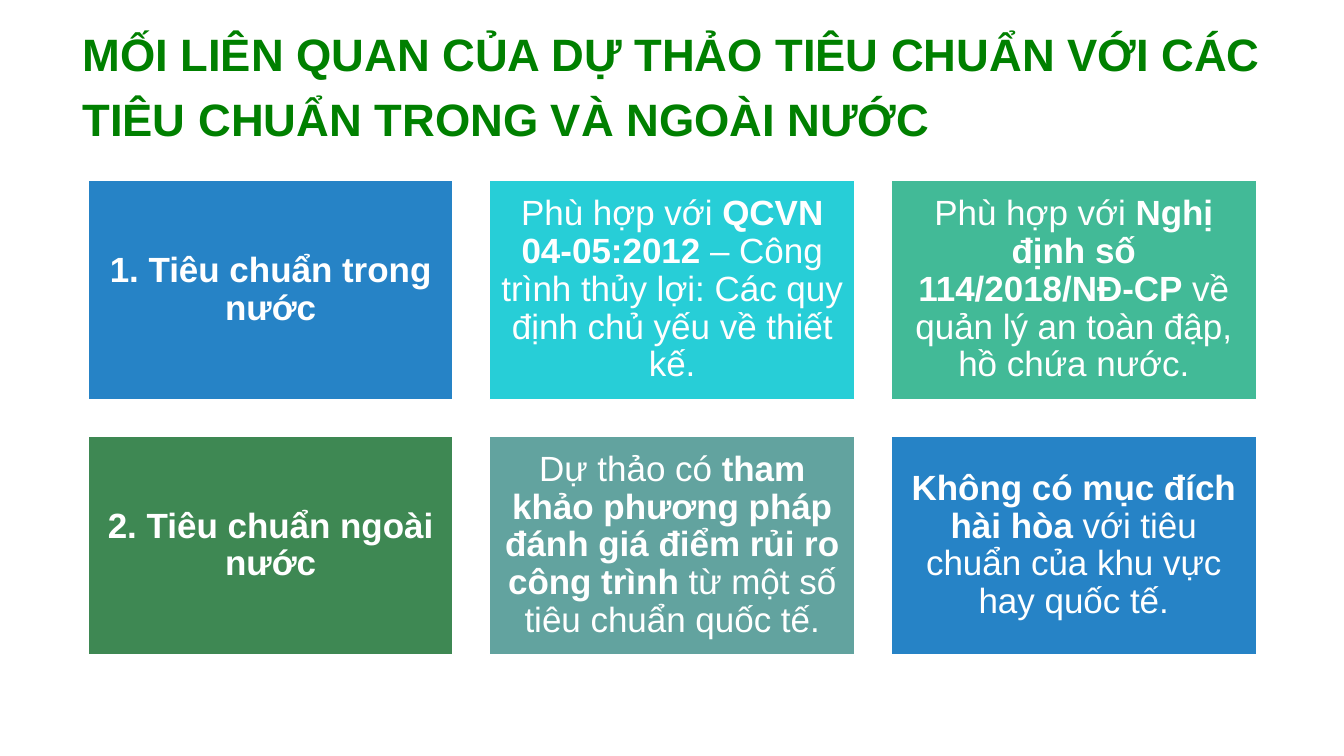
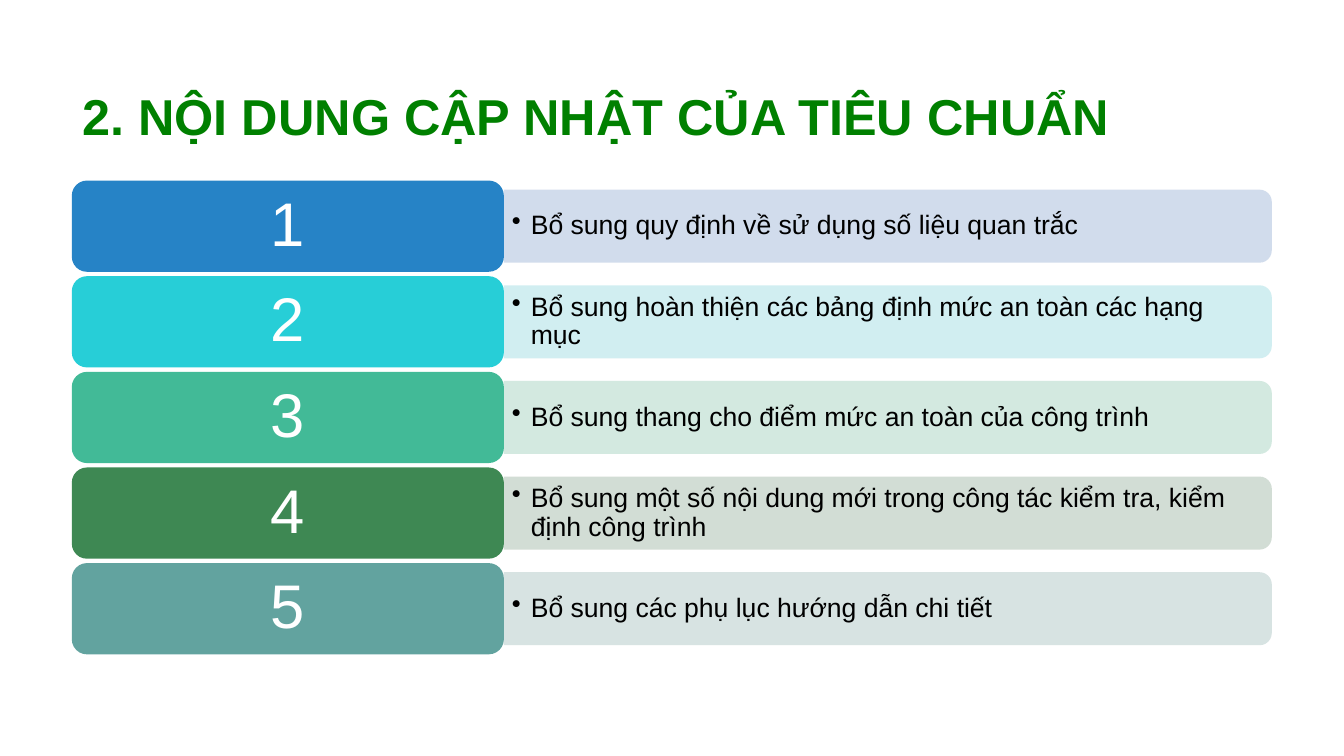
from lxml.etree import SubElement
from pptx import Presentation
from pptx.dml.color import RGBColor
from pptx.enum.shapes import MSO_SHAPE as Preset
from pptx.enum.text import MSO_ANCHOR as Anchor, PP_ALIGN as Align
from pptx.oxml.ns import qn
from pptx.util import Cm, Pt

FONT = "Arial"
COLORS = {
    "title": "008000",
    "white": "FFFFFF",
    "black": "000000",
    "blue": "2683C6",
    "cyan": "27CED7",
    "mint": "42BA97",
    "green": "3E8853",
    "teal": "62A39F",
    "pale blue": "CDD9EA",
    "pale cyan": "CDEDF0",
    "pale mint": "CFE7DD",
    "pale green": "CEDAD1",
    "pale teal": "D3E0DF",
}
CONTENT_TOP = 4.55

CARDS = [
    [
        ("blue", [("1. Tiêu chuẩn trong nước", True)]),
        ("cyan", [
            ("Phù hợp với ", False),
            ("QCVN 04-05:2012", True),
            (" – Công trình thủy lợi: Các quy định chủ yếu về thiết kế.", False),
        ]),
        ("mint", [
            ("Phù hợp với ", False),
            ("Nghị định số 114/2018/NĐ-CP", True),
            (" về quản lý an toàn đập, hồ chứa nước.", False),
        ]),
    ],
    [
        ("green", [("2. Tiêu chuẩn ngoài nước", True)]),
        ("teal", [
            ("Dự thảo có ", False),
            ("tham khảo phương pháp đánh giá điểm rủi ro công trình", True),
            (" từ một số tiêu chuẩn quốc tế.", False),
        ]),
        ("blue", [
            ("Không có mục đích hài hòa", True),
            (" với tiêu chuẩn của khu vực hay quốc tế.", False),
        ]),
    ],
]

UPDATES = [
    ("blue", "Bổ sung quy định về sử dụng số liệu quan trắc"),
    ("cyan", "Bổ sung hoàn thiện các bảng định mức an toàn các hạng mục"),
    ("mint", "Bổ sung thang cho điểm mức an toàn của công trình"),
    ("green", "Bổ sung một số nội dung mới trong công tác kiểm tra, kiểm định công trình"),
    ("teal", "Bổ sung các phụ lục hướng dẫn chi tiết"),
]


def rgb(name):
    return RGBColor.from_string(COLORS[name])


def write_text(shape, runs, size, color, align=Align.CENTER, anchor=Anchor.MIDDLE,
               spacing=0.9, margins=(0.25, 0.25)):
    frame = shape.text_frame
    frame.word_wrap = True
    frame.vertical_anchor = anchor
    frame.margin_left = frame.margin_right = Cm(margins[0])
    frame.margin_top = frame.margin_bottom = Cm(margins[1])
    paragraph = frame.paragraphs[0]
    paragraph.alignment = align
    paragraph.line_spacing = spacing
    for text, bold in runs:
        run = paragraph.add_run()
        run.text = text
        run.font.name = FONT
        run.font.size = Pt(size)
        run.font.bold = bold
        run.font.color.rgb = rgb(color)
    return paragraph


def add_textbox(slide, left, top, width, height):
    return slide.shapes.add_textbox(Cm(left), Cm(top), Cm(width), Cm(height))


def add_block(slide, preset, left, top, width, height, fill, outline=None):
    shape = slide.shapes.add_shape(preset, Cm(left), Cm(top), Cm(width), Cm(height))
    shape.shadow.inherit = False
    shape.fill.solid()
    shape.fill.fore_color.rgb = rgb(fill)
    if outline:
        shape.line.color.rgb = rgb(outline)
        shape.line.width = Pt(1)
    else:
        shape.line.fill.background()
    return shape


def set_opacity(shape, percent):
    color = shape.fill._xPr.find(qn("a:solidFill"))[0]
    SubElement(color, qn("a:alpha"), val=str(percent * 1000))


def add_bullet(paragraph, indent):
    properties = paragraph._p.get_or_add_pPr()
    properties.set("marL", str(Cm(indent)))
    properties.set("indent", str(-Cm(indent)))
    SubElement(properties, qn("a:buChar"), char="•")


def add_titled_slide(presentation, title, size):
    slide = presentation.slides.add_slide(presentation.slide_layouts[6])
    box = add_textbox(slide, 1.83, 0.51, 30.25, 3.3)
    write_text(box, [(title, True)], size, "title", Align.LEFT, Anchor.BOTTOM,
               spacing=1.2, margins=(0.25, 0.13))
    return slide


def add_card_grid(slide):
    left, width, height, gap = 2.22, 9.2, 5.52, 0.92
    for row, cards in enumerate(CARDS):
        for column, (color, runs) in enumerate(cards):
            card = add_block(slide, Preset.RECTANGLE,
                             left + column * (width + gap),
                             CONTENT_TOP + row * (height + gap),
                             width, height, color, outline="white")
            write_text(card, runs, 25, "white")


def add_detail(slide, left, middle, color, text):
    length, thickness = 19.35, 1.84
    panel = add_block(slide, Preset.ROUND_2_SAME_RECTANGLE,
                      left + (length - thickness) / 2, middle - length / 2,
                      thickness, length, color)
    panel.rotation = 90
    set_opacity(panel, 90)
    box = add_textbox(slide, left, middle - thickness / 2, length - 0.1, thickness)
    paragraph = write_text(box, [(text, False)], 19, "black", Align.LEFT,
                           margins=(0.2, 0.1))
    add_bullet(paragraph, 0.48)


def add_update_list(slide):
    left, width, height, step = 1.81, 10.89, 2.3, 2.41
    for index, (color, text) in enumerate(UPDATES):
        top = CONTENT_TOP + index * step
        add_detail(slide, left + width, top + height / 2, f"pale {color}", text)
        badge = add_block(slide, Preset.ROUNDED_RECTANGLE, left, top, width, height, color)
        write_text(badge, [(str(index + 1), False)], 44, "white", margins=(0.45, 0.23))


def main():
    presentation = Presentation()
    presentation.slide_width = Cm(33.87)
    presentation.slide_height = Cm(19.05)
    add_card_grid(add_titled_slide(
        presentation,
        "MỐI LIÊN QUAN CỦA DỰ THẢO TIÊU CHUẨN VỚI CÁC TIÊU CHUẨN TRONG VÀ NGOÀI NƯỚC",
        32.4))
    add_update_list(add_titled_slide(
        presentation, "2. NỘI DUNG CẬP NHẬT CỦA TIÊU CHUẨN", 36))
    presentation.save("out.pptx")


if __name__ == "__main__":
    main()
